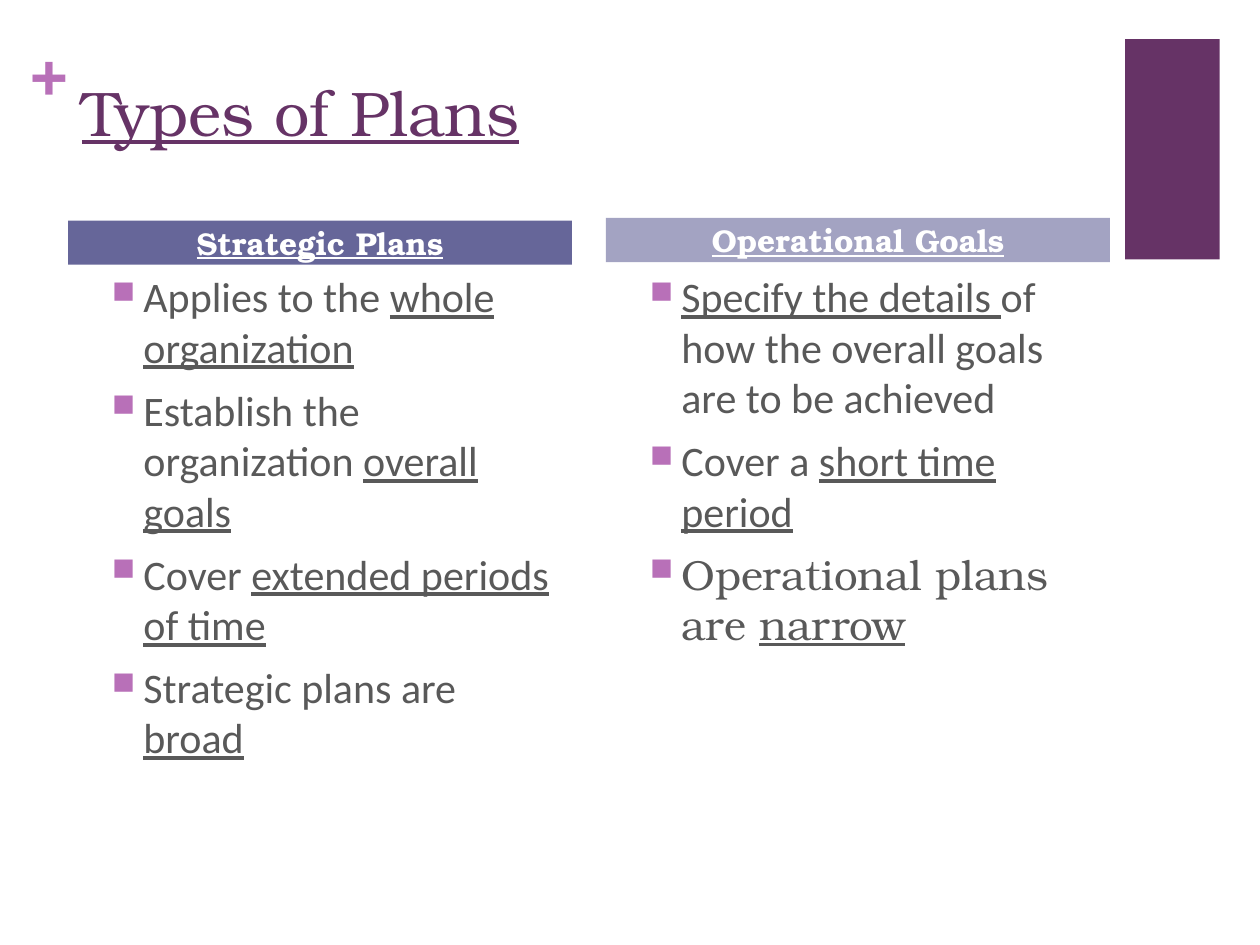
from lxml.etree import SubElement
from pptx import Presentation
from pptx.dml.color import RGBColor
from pptx.enum.shapes import MSO_SHAPE
from pptx.enum.text import MSO_ANCHOR, PP_ALIGN
from pptx.oxml.ns import qn
from pptx.util import Inches, Pt

SERIF, SANS = "TeX Gyre Bonum", "Calibri"
PLUM, ORCHID, GREY, WHITE = "663366", "B870B8", "595959", "FFFFFF"
TITLE = {"name": SERIF, "size": Pt(36), "bold": False, "underline": True}
PLUS = {"name": SERIF, "size": Pt(36), "bold": True}
HEADING = {"name": SERIF, "size": Pt(18), "bold": True, "underline": True}
BODY = {"name": SANS, "size": Pt(24)}
INSETS = ("margin_left", "margin_top", "margin_right", "margin_bottom")

# Each column: left, heading top, heading fill, heading, items.
# An item is a font and its (text, underlined) spans.
COLUMNS = [
    (0.54, 1.75, "666699", "Strategic Plans", [
        (SANS, [("Applies to the ", False), ("whole organization", True)]),
        (SANS, [("Establish the organization ", False), ("overall goals", True)]),
        (SANS, [("Cover ", False), ("extended periods of time", True)]),
        (SANS, [("Strategic plans are ", False), ("broad", True)]),
    ]),
    (4.81, 1.73, "A3A3C2", "Operational Goals", [
        (SANS, [("Specify the details ", True),
                ("of how the overall goals are to be achieved", False)]),
        (SANS, [("Cover a ", False), ("short time period", True)]),
        (SERIF, [("Operational plans are ", False), ("narrow", True)]),
    ]),
]


def color(hex_value):
    return RGBColor.from_string(hex_value)


def add_span(para, text, hex_value, style):
    span = para.add_run()
    span.text = text
    for name, value in style.items():
        setattr(span.font, name, value)
    span.font.color.rgb = color(hex_value)


def set_insets(frame, *values):
    for name, value in zip(INSETS, values):
        setattr(frame, name, Inches(value))


def add_block(page, box, fill):
    block = page.shapes.add_shape(MSO_SHAPE.RECTANGLE, *map(Inches, box))
    block.shadow.inherit = False
    block.fill.solid()
    block.fill.fore_color.rgb = color(fill)
    block.line.fill.background()
    return block


def add_text_box(page, box):
    frame = page.shapes.add_textbox(*map(Inches, box)).text_frame
    frame.word_wrap = True
    return frame


def add_bullet(para):
    """Give the paragraph a square bullet with a hanging indent."""
    para.space_before = Pt(7.2)
    props = para._p.get_or_add_pPr()
    props.set("marL", str(Inches(0.5)))
    props.set("indent", str(Inches(-0.25)))
    SubElement(SubElement(props, qn("a:buClr")), qn("a:srgbClr"), val=ORCHID)
    SubElement(props, qn("a:buSzPct"), val="75000")
    SubElement(props, qn("a:buChar"), char="■")


def add_title(page, box, text):
    title = page.shapes.title
    title.left, title.top, title.width, title.height = map(Inches, box)
    frame = title.text_frame
    frame.word_wrap = True
    frame.vertical_anchor = MSO_ANCHOR.TOP
    para = frame.paragraphs[0]
    para.alignment = PP_ALIGN.LEFT
    add_span(para, text, PLUM, TITLE)


def add_decoration(page):
    add_block(page, (8.93, 0.31, 0.75, 1.75), PLUM)
    frame = add_text_box(page, (0.24, 0.25, 0.29, 0.61))
    frame.word_wrap = False
    set_insets(frame, 0, 0, 0, 0)
    add_span(frame.paragraphs[0], "+", ORCHID, PLUS)


def add_heading(page, box, text, fill):
    frame = add_block(page, box, fill).text_frame
    frame.vertical_anchor = MSO_ANCHOR.MIDDLE
    set_insets(frame, 0.1, 0, 0.1, 0)
    para = frame.paragraphs[0]
    para.alignment = PP_ALIGN.CENTER
    add_span(para, text, WHITE, HEADING)


def add_bullet_list(page, box, items):
    frame = add_text_box(page, box)
    for index, (font, spans) in enumerate(items):
        para = frame.add_paragraph() if index else frame.paragraphs[0]
        add_bullet(para)
        for text, underlined in spans:
            add_span(para, text, GREY, BODY | {"name": font, "underline": underlined})


def main():
    deck = Presentation()
    deck.slide_width, deck.slide_height = Inches(10), Inches(7.5)
    page = deck.slides.add_slide(deck.slide_layouts[5])
    add_decoration(page)
    add_title(page, (0.55, 0.53, 8.26, 1.22), "Types of Plans")
    for left, top, fill, heading, items in COLUMNS:
        add_bullet_list(page, (left, 2.1, 4, 4.02), items)
        add_heading(page, (left, top, 4, 0.35), heading, fill)
    deck.save("out.pptx")


if __name__ == "__main__":
    main()
